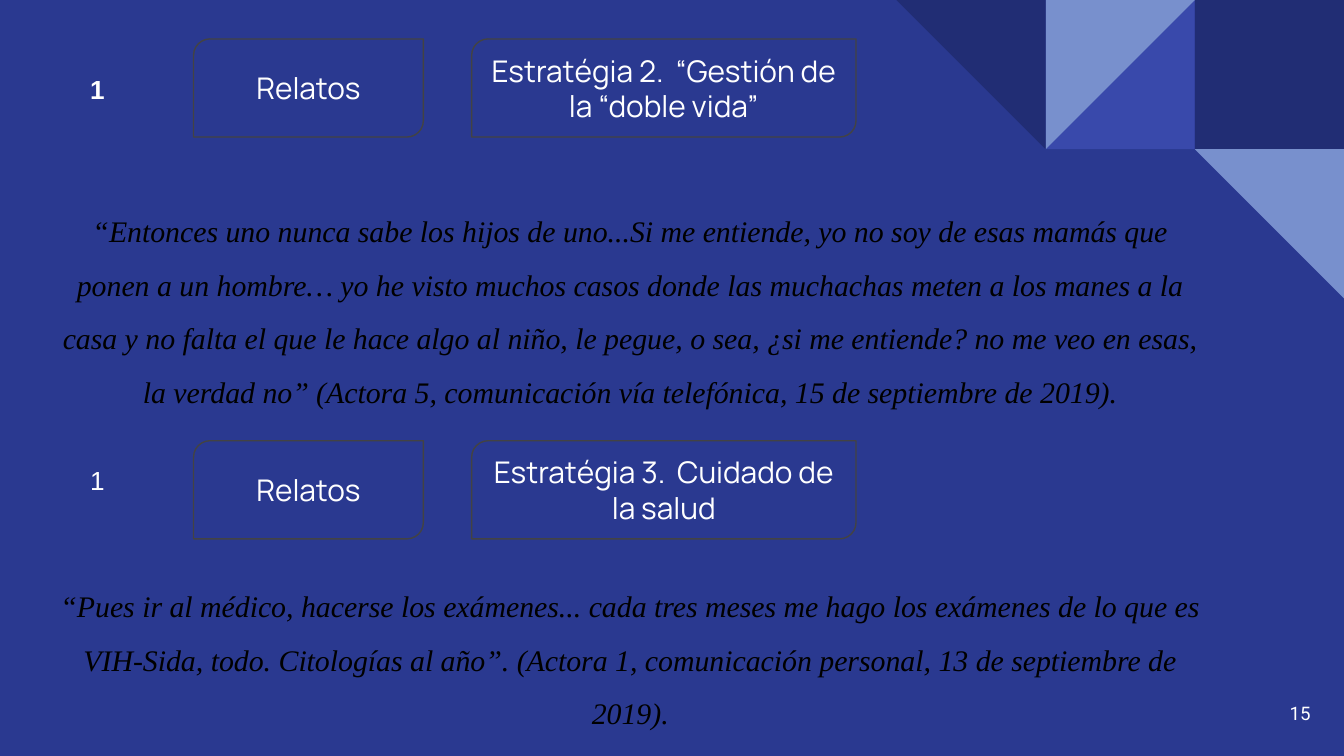
from dataclasses import dataclass

from pptx import Presentation
from pptx.dml.color import RGBColor
from pptx.enum.shapes import MSO_SHAPE
from pptx.enum.text import MSO_ANCHOR, PP_ALIGN
from pptx.util import Inches, Pt

RECT = MSO_SHAPE.RECTANGLE
TRIANGLE = MSO_SHAPE.RIGHT_TRIANGLE
LABEL = MSO_SHAPE.ROUND_2_DIAG_RECTANGLE
OVAL = MSO_SHAPE.OVAL
TOP, MIDDLE = MSO_ANCHOR.TOP, MSO_ANCHOR.MIDDLE
CENTER, RIGHT = PP_ALIGN.CENTER, PP_ALIGN.RIGHT


@dataclass(frozen=True)
class TextStyle:
    font: str
    size: float
    color: str
    bold: bool = False
    italic: bool = False


@dataclass(frozen=True)
class Theme:
    blue: str = "2A3990"
    navy: str = "212D74"
    indigo: str = "3949AB"
    sky: str = "7890CD"
    outline: str = "434343"
    line_width: float = 0.75
    label: TextStyle = TextStyle("Manrope", 16, "FFFFFF")
    number: TextStyle = TextStyle("Arial", 14, "FFFFFF")
    bold_number: TextStyle = TextStyle("Arial", 14, "FFFFFF", bold=True)
    quote: TextStyle = TextStyle("Times New Roman", 16, "000000", italic=True)
    page_number: TextStyle = TextStyle("Roboto", 10, "FFFFFF")


THEME = Theme()
PAGE_WIDTH = 10
PAGE_HEIGHT = PAGE_WIDTH * 9 / 16
TILE = 1.11

# Column, row, preset shape, colour, rotation, mirrored
TILES = [
    (3, 0, RECT, THEME.navy, 0, False),
    (2, 0, TRIANGLE, THEME.indigo, 0, True),
    (2, 0, TRIANGLE, THEME.sky, 180, True),
    (1, 0, TRIANGLE, THEME.navy, 180, False),
    (3, 1, TRIANGLE, THEME.sky, 180, False),
]

# Label top, number top, quote top, number style, strategy, quote
STORIES = [
    (0.29, 0.37, 1.35, THEME.bold_number,
     "Estratégia 2.  “Gestión de la “doble vida”",
     "“Entonces uno nunca sabe los hijos de uno...Si me entiende, yo no soy de "
     "esas mamás que ponen a un hombre… yo he visto muchos casos donde las "
     "muchachas meten a los manes a la casa y no falta el que le hace algo al "
     "niño, le pegue, o sea, ¿si me entiende? no me veo en esas, la verdad no” "
     "(Actora 5, comunicación vía telefónica, 15 de septiembre de 2019)."),
    (3.28, 3.28, 4.14, THEME.number,
     "Estratégia 3.  Cuidado de la salud",
     "“Pues ir al médico, hacerse los exámenes... cada tres meses me hago los "
     "exámenes de lo que es VIH-Sida, todo. Citologías al año”. (Actora 1, "
     "comunicación personal, 13 de septiembre de 2019)."),
]


def rgb(color):
    return RGBColor.from_string(color)


def write(shape, text, style, align=CENTER, anchor=MIDDLE, spacing=None):
    frame = shape.text_frame
    frame.word_wrap = True
    frame.vertical_anchor = anchor
    frame.margin_left = frame.margin_right = Inches(0.1)
    frame.margin_top = frame.margin_bottom = Inches(0.1)
    para = frame.paragraphs[0]
    para.alignment = align
    if spacing:
        para.line_spacing = spacing
    span = para.add_run()
    span.text = text
    span.font.name = style.font
    span.font.size = Pt(style.size)
    span.font.color.rgb = rgb(style.color)
    span.font.bold = style.bold
    span.font.italic = style.italic


def add_filled(page, kind, area, fill, line=None):
    shape = page.shapes.add_shape(kind, *map(Inches, area))
    shape.shadow.inherit = False
    shape.fill.solid()
    shape.fill.fore_color.rgb = rgb(fill)
    if line:
        shape.line.color.rgb = rgb(line)
        shape.line.width = Pt(THEME.line_width)
    else:
        shape.line.fill.background()
    return shape


def add_text(page, area, text, style, **layout):
    box = page.shapes.add_textbox(*map(Inches, area))
    write(box, text, style, **layout)


def add_corner_pattern(page):
    """Tile the top right corner, counting columns so that the fourth ends at the edge."""
    for column, row, kind, color, rotation, mirrored in TILES:
        left = PAGE_WIDTH - (4 - column) * TILE
        tile = add_filled(page, kind, (left, row * TILE, TILE, TILE), color)
        tile.rotation = rotation
        if mirrored:
            tile.element.spPr.get_or_add_xfrm().set("flipH", "1")


def add_label(page, left, top, width, text):
    label = add_filled(page, LABEL, (left, top, width, 0.73), THEME.blue, THEME.outline)
    label.adjustments[0] = 0.167
    label.adjustments[1] = 0
    write(label, text, THEME.label)


def add_story(page, label_top, number_top, quote_top, number_style, strategy, quote):
    add_label(page, 1.44, label_top, 1.71, "Relatos")
    add_label(page, 3.51, label_top, 2.86, strategy)
    badge = add_filled(page, OVAL, (0.49, number_top, 0.47, 0.58), THEME.blue, THEME.blue)
    write(badge, "1", number_style)
    add_text(page, (0.34, quote_top, 8.7, 2.03), quote, THEME.quote,
             anchor=TOP, spacing=1.5)


def main():
    deck = Presentation()
    deck.slide_width = Inches(PAGE_WIDTH)
    deck.slide_height = Inches(PAGE_HEIGHT)
    page = deck.slides.add_slide(deck.slide_layouts[6])
    page.background.fill.solid()
    page.background.fill.fore_color.rgb = rgb(THEME.blue)

    add_corner_pattern(page)
    add_text(page, (9.25, 5.09, 0.6, 0.43), "15", THEME.page_number, align=RIGHT)
    for story in STORIES:
        add_story(page, *story)
    deck.save("out.pptx")


if __name__ == "__main__":
    main()
